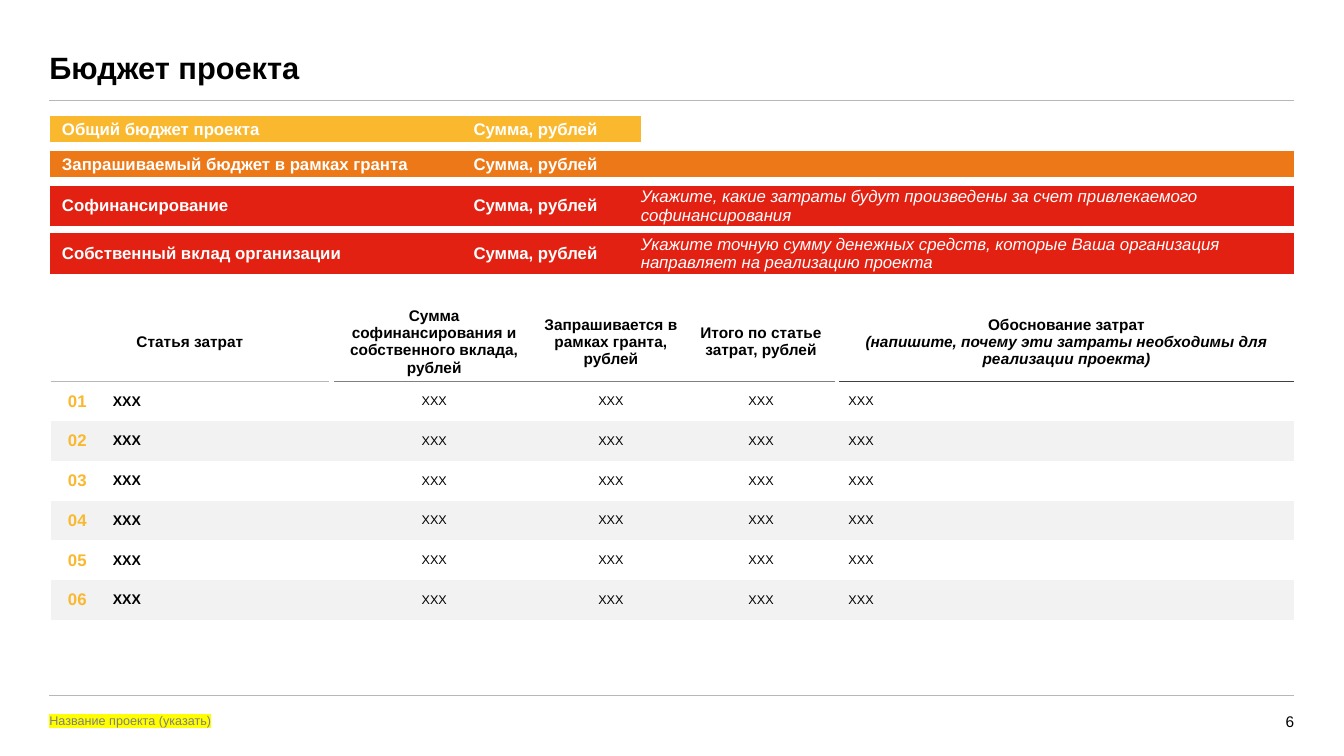
import lxml.etree
import pptx
import pptx.dml.color
import pptx.enum.shapes
import pptx.enum.text
import pptx.oxml.ns
import pptx.util

Pt = pptx.util.Pt
qn = pptx.oxml.ns.qn
ALIGN = pptx.enum.text.PP_ALIGN
ANCHOR = pptx.enum.text.MSO_ANCHOR
COLORS = {
    "black": "000000", "white": "FFFFFF", "yellow": "FAB82E", "orange": "ED7817",
    "red": "E32112", "band": "F2F2F2", "rule": "B7B7B6", "footer": "808080",
    "marker": "FFFF00", "mid": "808080", "dark": "404040",
}
NO_STYLE = "{2D5ABB26-0587-4C30-8999-92F81FD0307C}"


class Deck:
    """Holds the style and the current slide, and draws each kind of element."""

    def __init__(self):
        self.prs = pptx.Presentation()
        self.prs.slide_width, self.prs.slide_height = Pt(960), Pt(540)
        self.font = "Arial"
        self.slide = self.prs.slides.add_slide(self.prs.slide_layouts[6])

    def rgb(self, name):
        return pptx.dml.color.RGBColor.from_string(COLORS[name])

    def rule(self, y):
        line = self.slide.shapes.add_connector(
            pptx.enum.shapes.MSO_CONNECTOR.STRAIGHT, Pt(35.3), Pt(y), Pt(924), Pt(y))
        line.line.color.rgb = self.rgb("rule")
        line.line.width = Pt(0.5)
        lxml.etree.SubElement(line._element.spPr, qn("a:effectLst"))

    def paragraph(self, p, text, size, color="black", bold=False, italic=False, align=ALIGN.LEFT):
        p.alignment = align
        p.font.name, p.font.size = self.font, Pt(size)
        p.font.bold, p.font.italic = bold, italic
        p.font.color.rgb = self.rgb(color)
        r = p.add_run()
        r.text = text
        return r

    def text(self, box, text, size, anchor=ANCHOR.MIDDLE, **style):
        tf = self.slide.shapes.add_textbox(*map(Pt, box)).text_frame
        tf.word_wrap = True
        tf.vertical_anchor = anchor
        tf.margin_left = tf.margin_top = tf.margin_right = tf.margin_bottom = 0
        return self.paragraph(tf.paragraphs[0], text, size, **style)

    def highlight(self, r, color):
        mark = lxml.etree.SubElement(r._r.get_or_add_rPr(), qn("a:highlight"))
        lxml.etree.SubElement(mark, qn("a:srgbClr"), val=COLORS[color])

    def table(self, left, top, widths, heights):
        frame = self.slide.shapes.add_table(
            len(heights), len(widths), Pt(left), Pt(top), Pt(sum(widths)), Pt(sum(heights)))
        table = frame.table
        table.first_row = table.horz_banding = False
        table._tbl.tblPr.find(qn("a:tableStyleId")).text = NO_STYLE
        for column, width in zip(table.columns, widths):
            column.width = Pt(width)
        for row, height in zip(table.rows, heights):
            row.height = Pt(height)
        return table

    def cell(self, cell, lines=(), fill=None, inset=(0, 0), **style):
        cell.margin_left = cell.margin_right = Pt(inset[0])
        cell.margin_top = cell.margin_bottom = Pt(inset[1])
        cell.vertical_anchor = ANCHOR.MIDDLE
        if fill:
            cell.fill.solid()
            cell.fill.fore_color.rgb = self.rgb(fill)
        else:
            cell.fill.background()
        tf = cell.text_frame
        for i, (text, italic) in enumerate(lines):
            p = tf.add_paragraph() if i else tf.paragraphs[0]
            self.paragraph(p, text, italic=italic, **style)
        if not lines:
            lxml.etree.SubElement(tf.paragraphs[0]._p, qn("a:endParaRPr"), sz="200")

    def bottom_border(self, cell, color):
        line = lxml.etree.Element(qn("a:lnB"), w=str(Pt(0.75)))
        fill = lxml.etree.SubElement(line, qn("a:solidFill"))
        lxml.etree.SubElement(fill, qn("a:srgbClr"), val=COLORS[color])
        cell._tc.get_or_add_tcPr().insert(0, line)

    def summary(self, bars):
        heights = [18.75, 6.25, 18.75, 6, 27.75, 5.25, 27.75]
        table = self.table(36, 82.9, [8.3, 263, 150.5, 466.5], heights)
        for row in range(len(heights)):
            title, fill, note = bars[row // 2] if row % 2 == 0 else ("", None, None)
            texts = ["", title, "Сумма, рублей" if title else "", note]
            for col, text in enumerate(texts):
                self.cell(
                    table.cell(row, col), [(text, col == 3)] if text else [],
                    fill=None if text is None else fill, size=12, color="white", bold=col < 3,
                    align=ALIGN.CENTER if col == 2 else ALIGN.LEFT)

    def costs(self, headers, count):
        widths = [38, 161, 3.5, 143, 109.5, 105, 3.5, 324.5]
        table = self.table(36.2, 216, widths, [56.5] + [28.4] * count)
        table.cell(0, 0).merge(table.cell(0, 1))
        rules = ["rule", "rule", None, "mid", "mid", "mid", None, "dark"]
        for col, color in enumerate(rules):
            cell = table.cell(0, col)
            side = 6.5 if color else 0
            self.cell(cell, headers.get(col, []), inset=(side, 1.8), size=11, bold=True,
                      align=ALIGN.CENTER)
            if color:
                self.bottom_border(cell, color)
            for row in range(1, count + 1):
                text = f"{row:02d}" if col == 0 else "XXX"
                self.cell(
                    table.cell(row, col), [(text, False)] if color else [],
                    fill=None if row % 2 else "band", inset=(side, 3.6),
                    size={0: 12, 1: 10}.get(col, 9), color="black" if col else "yellow",
                    bold=col < 2, align=ALIGN.LEFT if col in (1, 7) else ALIGN.CENTER)


def main():
    deck = Deck()
    for y in (71.5, 496.8):
        deck.rule(y)
    deck.text((35.3, 38.2, 769, 23), "Бюджет проекта", 22, anchor=ANCHOR.BOTTOM, bold=True)
    footer = deck.text((35.3, 505.5, 854.6, 18), "Название проекта (указать)", 9, color="footer")
    deck.highlight(footer, "marker")
    deck.text((898.5, 509, 26, 12.2), "6", 11, align=ALIGN.RIGHT)
    deck.costs({
        0: [("Статья затрат", False)],
        3: [("Сумма софинансирования и собственного вклада, рублей", False)],
        4: [("Запрашивается в рамках гранта, рублей", False)],
        5: [("Итого по статье затрат, рублей", False)],
        7: [("Обоснование затрат", False),
            ("(напишите, почему эти затраты необходимы для реализации проекта)", True)],
    }, 6)
    deck.summary([
        ("Общий бюджет проекта", "yellow", None),
        ("Запрашиваемый бюджет в рамках гранта", "orange", ""),
        ("Софинансирование", "red", "Укажите, какие затраты будут произведены "
         "за счет привлекаемого софинансирования"),
        ("Собственный вклад организации", "red", "Укажите точную сумму денежных средств, "
         "которые Ваша организация направляет на реализацию проекта"),
    ])
    deck.prs.save("out.pptx")


if __name__ == "__main__":
    main()
